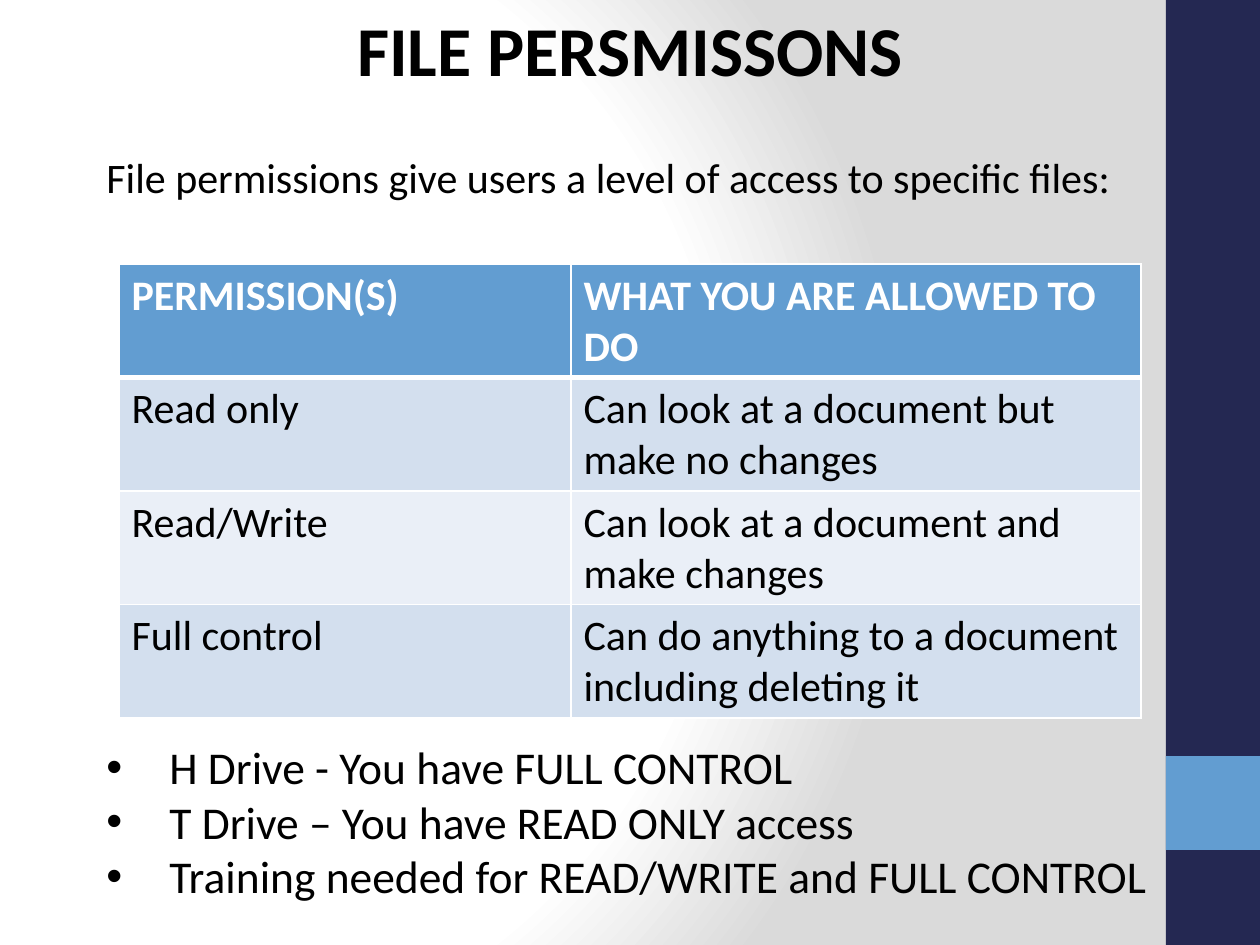
from dataclasses import dataclass

from lxml.etree import SubElement
from pptx import Presentation
from pptx.dml.color import RGBColor as Rgb
from pptx.enum.shapes import MSO_SHAPE as Shape
from pptx.enum.text import PP_ALIGN as Align
from pptx.oxml import parse_xml
from pptx.oxml.ns import nsdecls, qn
from pptx.util import Pt

SCALE = 914400 / 126  # EMU in one px


@dataclass(frozen=True)
class Theme:
    font: str = "Calibri"
    navy: str = "242852"
    blue: str = "629DD1"
    band_dark: str = "D3DFEE"
    band_light: str = "EAEFF7"
    black: str = "000000"
    white: str = "FFFFFF"
    grey: str = "DADADA"
    title_size: int = 40
    body_size: int = 24
    bullet_size: int = 26


THEME = Theme()

PERMISSIONS = [
    ("PERMISSION(S)", "WHAT YOU ARE ALLOWED TO DO"),
    ("Read only", "Can look at a document but make no changes"),
    ("Read/Write", "Can look at a document and make changes"),
    ("Full control", "Can do anything to a document including deleting it"),
]
DRIVES = [
    "H Drive - You have FULL CONTROL",
    "T Drive – You have READ ONLY access",
    "Training needed for READ/WRITE and FULL CONTROL",
]


def px(length):
    return round(length * SCALE)


def style_text(frame, size, color=THEME.black, bold=False):
    for paragraph in frame.paragraphs:
        for run in paragraph.runs:
            run.font.name = THEME.font
            run.font.size = Pt(size)
            run.font.bold = bold
            run.font.color.rgb = Rgb.from_string(color)


def paint_background(slide):
    """Radial fade from white to grey."""
    fill = slide.background.fill
    fill.gradient()
    default = slide.element.find(".//" + qn("a:gradFill"))
    stops = "".join(
        f'<a:gs pos="{percent * 1000}"><a:srgbClr val="{color}"/></a:gs>'
        for percent, color in ((0, THEME.white), (75, THEME.white), (100, THEME.grey))
    )
    fade = parse_xml(
        f'<a:gradFill {nsdecls("a")} rotWithShape="1"><a:gsLst>{stops}</a:gsLst>'
        '<a:path path="circle"><a:fillToRect l="20000" t="50000" r="100000" b="50000"/>'
        "</a:path></a:gradFill>"
    )
    default.getparent().replace(default, fade)


def add_block(slide, left, top, width, height, color):
    block = slide.shapes.add_shape(
        Shape.RECTANGLE, px(left), px(top), px(width), px(height))
    block.shadow.inherit = False
    block.fill.solid()
    block.fill.fore_color.rgb = Rgb.from_string(color)
    block.line.fill.background()


def add_text(slide, top, height, text, size, bold=False, align=Align.LEFT):
    box = slide.shapes.add_textbox(px(94), px(top), px(1072), px(height))
    frame = box.text_frame
    frame.word_wrap = True
    frame.text = text
    for paragraph in frame.paragraphs:
        paragraph.alignment = align
    style_text(frame, size, bold=bold)
    return frame


def add_bullets(frame, indent):
    for paragraph in frame.paragraphs:
        properties = paragraph._p.get_or_add_pPr()
        properties.set("marL", str(px(indent)))
        properties.set("indent", str(-px(indent)))
        SubElement(properties, qn("a:buFont"), typeface="Arial")
        SubElement(properties, qn("a:buChar"), char="•")


def set_borders(cell, widths):
    """Draw white borders; widths are points by side."""
    properties = cell._tc.get_or_add_tcPr()
    for position, (side, width) in enumerate(widths.items()):
        properties.insert(position, parse_xml(
            f'<a:ln{side} {nsdecls("a")} w="{Pt(width)}"><a:solidFill>'
            f'<a:srgbClr val="{THEME.white}"/></a:solidFill></a:ln{side}>'))


def add_permission_table(slide, left, top, column_widths, row_height):
    table = slide.shapes.add_table(
        len(PERMISSIONS), len(column_widths), px(left), px(top),
        px(sum(column_widths)), px(row_height * len(PERMISSIONS))).table
    for column, width in zip(table.columns, column_widths):
        column.width = px(width)
    for index, entries in enumerate(PERMISSIONS):
        table.rows[index].height = px(row_height)
        header = index == 0
        band = THEME.band_dark if index % 2 else THEME.band_light
        for cell, entry in zip(table.rows[index].cells, entries):
            cell.text = entry
            style_text(cell.text_frame, THEME.body_size,
                       THEME.white if header else THEME.black, header)
            cell.fill.solid()
            cell.fill.fore_color.rgb = Rgb.from_string(THEME.blue if header else band)
            set_borders(cell, {"L": 1, "R": 1, "T": 3 if index == 1 else 1,
                               "B": 3 if header else 1})


def main():
    deck = Presentation()
    deck.slide_width, deck.slide_height = px(1260), px(945)
    slide = deck.slides.add_slide(deck.slide_layouts[6])

    # Background and side band
    paint_background(slide)
    add_block(slide, 1166, 0, 94, 945, THEME.navy)
    add_block(slide, 1166, 756, 94, 94, THEME.blue)

    # Title and introduction
    add_text(slide, 0, 98, "FILE PERSMISSONS", THEME.title_size,
             bold=True, align=Align.CENTER)
    add_text(slide, 145, 64,
             "File permissions give users a level of access to specific files:",
             THEME.body_size)

    # Permission levels
    add_permission_table(slide, 119, 264, (452, 570), 113)

    # Drive access
    drives = add_text(slide, 733, 179, "\n".join(DRIVES), THEME.bullet_size)
    add_bullets(drives, 63)

    deck.save("out.pptx")


if __name__ == "__main__":
    main()
